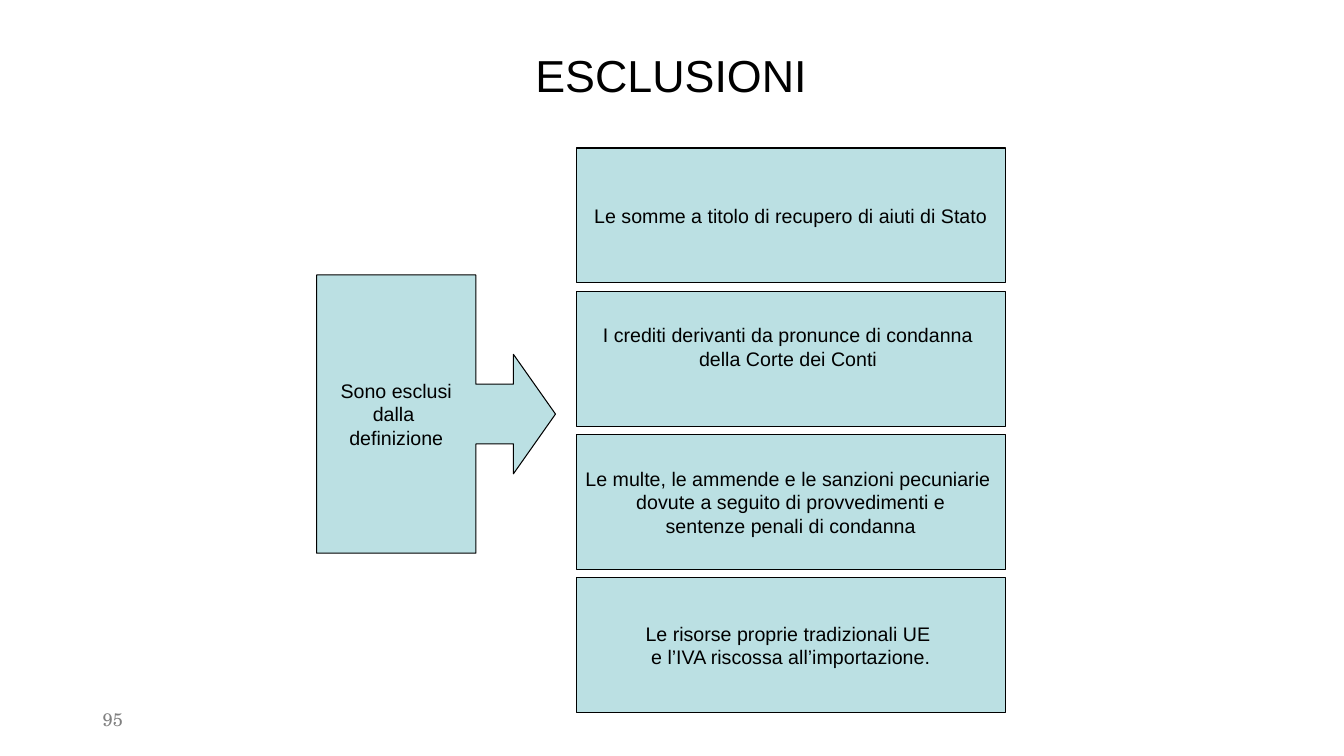
from pptx import Presentation
from pptx import util as u
from pptx.dml import color
from pptx.enum import shapes, text


def rgb(hex_code):
    return color.RGBColor.from_string(hex_code)


class SlideBuilder:
    FONT = "Arial"
    INK = "000000"
    PANEL = "BBE0E3"
    BODY_SIZE = 14

    def __init__(self, slide):
        self.slide = slide

    def fill_text(self, frame, lines, size, font=FONT, ink=INK,
                  align=text.PP_ALIGN.CENTER, spacing=1.0, wrap=True):
        frame.word_wrap = wrap
        frame.vertical_anchor = text.MSO_ANCHOR.MIDDLE
        for index, line in enumerate(lines):
            paragraph = frame.add_paragraph() if index else frame.paragraphs[0]
            paragraph.text = line
            paragraph.alignment = align
            paragraph.line_spacing = spacing
            paragraph.font.name = font
            paragraph.font.size = u.Pt(size)
            paragraph.font.color.rgb = rgb(ink)

    def label(self, box, line, size, **style):
        label = self.slide.shapes.add_textbox(*map(u.Cm, box))
        self.fill_text(label.text_frame, [line], size, **style)

    def panel(self, kind, box, lines, adjustments=()):
        panel = self.slide.shapes.add_shape(kind, *map(u.Cm, box))
        for index, value in enumerate(adjustments):
            panel.adjustments[index] = value
        panel.shadow.inherit = False
        panel.fill.solid()
        panel.fill.fore_color.rgb = rgb(self.PANEL)
        panel.line.color.rgb = rgb(self.INK)
        panel.line.width = u.Pt(0.75)
        self.fill_text(panel.text_frame, lines, self.BODY_SIZE, wrap=False)
        return panel


def main():
    deck = Presentation()
    deck.slide_width, deck.slide_height = u.Cm(33.87), u.Cm(19.05)
    builder = SlideBuilder(deck.slides.add_slide(deck.slide_layouts[6]))

    # Title and page number
    builder.label((2.31, 0.13, 29.21, 3.68), "ESCLUSIONI", 32, spacing=0.9)
    builder.label((2.34, 17.65, 7.62, 1.02), "95", 13, font="TeX Gyre Schola",
                  ink="808080", align=text.PP_ALIGN.LEFT, spacing=0.93)

    # Callout pointing to the exclusions
    builder.panel(shapes.MSO_SHAPE.RIGHT_ARROW_CALLOUT, (7.98, 6.93, 6.02, 7.01),
                  ["Sono esclusi", "dalla ", "definizione"],
                  adjustments=(0.25, 0.25, 0.176, 0.667))

    # Column of exclusions
    exclusions = [
        ["Le somme a titolo di recupero di aiuti di Stato"],
        ["I crediti derivanti da pronunce di condanna ", "della Corte dei Conti "],
        ["Le multe, le ammende e le sanzioni pecuniarie ",
         "dovute a seguito di provvedimenti e", "sentenze penali di condanna"],
        ["Le risorse proprie tradizionali UE ",
         " e l’IVA riscossa all’importazione. "],
    ]
    first_top, pitch = 3.73, 3.61
    panels = [
        builder.panel(shapes.MSO_SHAPE.RECTANGLE,
                      (14.53, first_top + row * pitch, 10.8, 3.4), lines)
        for row, lines in enumerate(exclusions)
    ]
    # The Corte dei Conti text sits half a line above the middle
    panels[1].text_frame.margin_bottom = u.Cm(0.72)

    deck.save("out.pptx")


if __name__ == "__main__":
    main()
